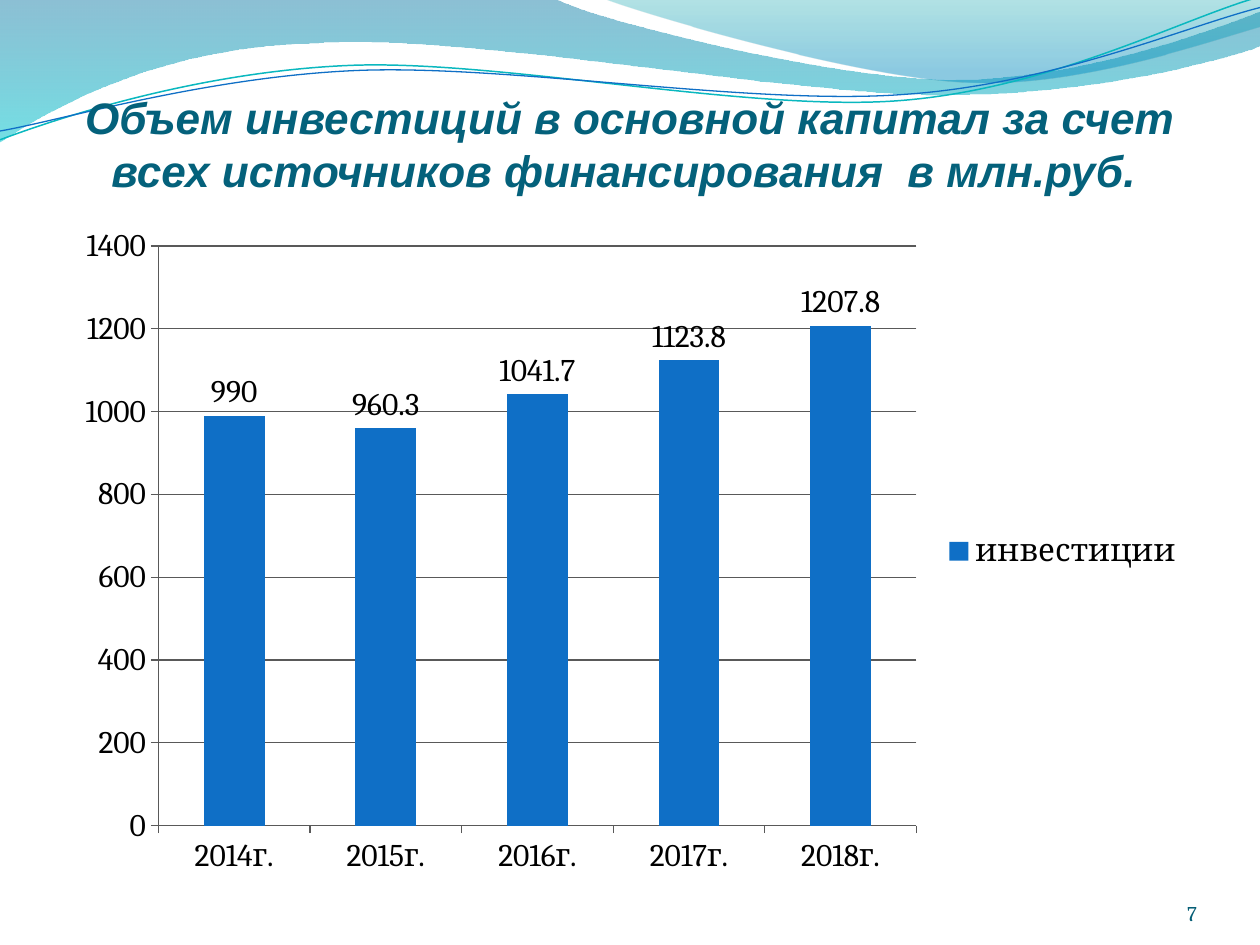
import pptx
import pptx.chart.data
import pptx.dml.color
import pptx.enum.chart
import pptx.enum.text
import pptx.oxml
import pptx.oxml.ns
import pptx.util
from dataclasses import dataclass

Inches, Pt = pptx.util.Inches, pptx.util.Pt
qn = pptx.oxml.ns.qn
UNITS = 100  # freeform grid steps per inch; the builder keeps whole steps only


@dataclass(frozen=True)
class Theme:
    title: str = "04617B"
    number: str = "045D75"
    bars: str = "0F6FC6"
    teal: str = "0AB8BF"
    grid: str = "595959"
    text: str = "000000"
    title_font: str = "Arial"
    body_font: str = "Cambria"
    title_size: float = 25.2
    chart_size: float = 18
    number_size: float = 12


THEME = Theme()

# Each wave: start point, then segments of one point (line) or three (curve)
WAVE_FILLS = [
    ((0, 0),
     [[(4.4, -0.01)],
      [(4.76, 0.17), (6.64, 0.63), (7.58, 0.63)],
      [(8.53, 0.63), (9.58, 0.26), (10, 0.09)],
      [(10.01, 0.36)],
      [(9.83, 0.44), (8.7, 0.76), (7.46, 0.75)],
      [(6.22, 0.75), (3.82, 0.28), (2.57, 0.34)],
      [(1.29, 0.36), (0.46, 0.83), (-0.01, 1.13)]],
     [(0, "0074A1", 45), (1, "00C6CF", 55)]),
    ((4.79, -0.01),
     [[(5.09, 0.11), (6.82, 0.62), (7.69, 0.65)],
      [(8.56, 0.69), (9.61, 0.32), (10, 0.21)],
      [(10, 0)]],
     [(0, "00A1A9", 30), (0.8, "008BBF", 45)]),
]
WAVE_LINES = [
    ((0, 1.11),
     [[(0.48, 0.93), (1.58, 0.57), (2.77, 0.52)],
      [(3.95, 0.47), (5.93, 0.89), (7.13, 0.8)],
      [(8.33, 0.71), (9.38, 0.15), (9.98, -0.02)]],
     THEME.teal, 0.85),
    ((0, 1.04),
     [[(0.47, 0.96), (1.64, 0.61), (2.83, 0.56)],
      [(4.03, 0.51), (5.97, 0.84), (7.17, 0.75)],
      [(8.36, 0.67), (9.41, 0.21), (10, 0.06)]],
     THEME.bars, 0.75),
]


def rgb(value):
    return pptx.dml.color.RGBColor.from_string(value)


def apply(target, formats):
    for name, value in formats.items():
        setattr(target, name, value)


def place(shape, left, top, width, height):
    apply(shape, {"left": Inches(left), "top": Inches(top),
                  "width": Inches(width), "height": Inches(height)})


def style_font(font, name, size, color, **extra):
    apply(font, {"name": name, "size": Pt(size), **extra})
    font.color.rgb = rgb(color)


def add_curve(slide, start, segments, close):
    """Draw a freeform, then turn each three-point segment into a Bezier."""
    points = [(round(x * UNITS), round(y * UNITS))
              for x, y in [start, *(p for s in segments for p in s)]]
    builder = slide.shapes.build_freeform(*points[0], scale=Inches(1) / UNITS)
    builder.add_line_segments(points[1:], close=close)
    curve = builder.convert_to_shape()
    curve.shadow.inherit = False
    steps = iter(list(curve._element.iter(qn("a:lnTo"))))
    for segment in segments:
        step_group = [next(steps) for _ in segment]
        if len(segment) == 3:
            bezier = pptx.oxml.parse_xml(
                f"<a:cubicBezTo {pptx.oxml.ns.nsdecls('a')}/>")
            step_group[0].addprevious(bezier)
            for step in step_group:
                bezier.append(step[0])
                step.getparent().remove(step)
    return curve


def add_wave_fill(slide, start, segments, stops):
    wave = add_curve(slide, start, segments, close=True)
    wave.line.fill.background()
    wave.fill.gradient()
    wave.fill.gradient_angle = 270
    for stop, (position, color, _) in zip(wave.fill.gradient_stops, stops):
        stop.position = position
        stop.color.rgb = rgb(color)
    # Opacity of each gradient stop
    for element, (_, _, opacity) in zip(wave._element.iter(qn("a:gs")), stops):
        element[0].append(pptx.oxml.parse_xml(
            f'<a:alpha {pptx.oxml.ns.nsdecls("a")} val="{opacity * 1000}"/>'))


def add_wave_line(slide, start, segments, color, width):
    wave = add_curve(slide, start, segments, close=False)
    wave.fill.background()
    wave.line.color.rgb = rgb(color)
    wave.line.width = Pt(width)


def write_text(shape, text, align, top_inset, font):
    frame = shape.text_frame
    apply(frame, {"word_wrap": True, "margin_left": 0, "margin_right": 0,
                  "margin_top": Inches(top_inset), "margin_bottom": 0,
                  "auto_size": pptx.enum.text.MSO_AUTO_SIZE.NONE,
                  "vertical_anchor": pptx.enum.text.MSO_ANCHOR.BOTTOM})
    paragraph = frame.paragraphs[0]
    paragraph.alignment = align
    run = paragraph.add_run()
    run.text = text
    style_font(run.font, **font)


def add_investment_chart(slide):
    data = pptx.chart.data.CategoryChartData()
    data.categories = [f"{year}г." for year in range(2014, 2019)]
    data.add_series("инвестиции", [990, 960.3, 1041.7, 1123.8, 1207.8])
    chart = slide.shapes.add_chart(
        pptx.enum.chart.XL_CHART_TYPE.COLUMN_CLUSTERED,
        Inches(0.5), Inches(1.7), Inches(9), Inches(5.35), data).chart
    apply(chart, {"has_title": False, "has_legend": True})
    style_font(chart.font, THEME.body_font, THEME.chart_size, THEME.text)
    apply(chart.legend, {"include_in_layout": False,
                         "position": pptx.enum.chart.XL_LEGEND_POSITION.RIGHT})

    # Columns and their values
    plot = chart.plots[0]
    apply(plot, {"gap_width": 150, "vary_by_categories": False,
                 "has_data_labels": True})
    apply(plot.data_labels, {
        "show_value": True,
        "position": pptx.enum.chart.XL_LABEL_POSITION.OUTSIDE_END})
    investments = plot.series[0]
    investments.format.fill.solid()
    investments.format.fill.fore_color.rgb = rgb(THEME.bars)

    # Axes and gridlines
    years, amounts = chart.category_axis, chart.value_axis
    amounts.has_major_gridlines = True
    apply(amounts, {"minimum_scale": 0, "maximum_scale": 1400, "major_unit": 200})
    for axis in (years, amounts):
        axis.major_tick_mark = pptx.enum.chart.XL_TICK_MARK.OUTSIDE
    for part in (years, amounts, amounts.major_gridlines):
        part.format.line.color.rgb = rgb(THEME.grid)
        part.format.line.width = Pt(0.75)


def main():
    deck = pptx.Presentation()
    apply(deck, {"slide_width": Inches(10), "slide_height": Inches(7.5)})
    slide = deck.slides.add_slide(deck.slide_layouts[5])
    title = slide.shapes.title

    # Waves across the top
    for wave in WAVE_FILLS:
        add_wave_fill(slide, *wave)
    for wave in WAVE_LINES:
        add_wave_line(slide, *wave)

    # Title, in front of the waves
    slide.shapes._spTree.append(title._element)
    place(title, 0.5, 0.47, 9, 1.09)
    write_text(title,
               "Объем инвестиций в основной капитал за счет всех источников "
               "финансирования  в млн.руб. ",
               pptx.enum.text.PP_ALIGN.CENTER, 0.05,
               {"name": THEME.title_font, "size": THEME.title_size,
                "color": THEME.title, "bold": True, "italic": True})

    add_investment_chart(slide)

    # Slide number
    number = slide.shapes.add_textbox(
        Inches(8.67), Inches(6.95), Inches(0.83), Inches(0.4))
    write_text(number, "7", pptx.enum.text.PP_ALIGN.RIGHT, 0,
               {"name": THEME.body_font, "size": THEME.number_size,
                "color": THEME.number})
    deck.save("out.pptx")


if __name__ == "__main__":
    main()
